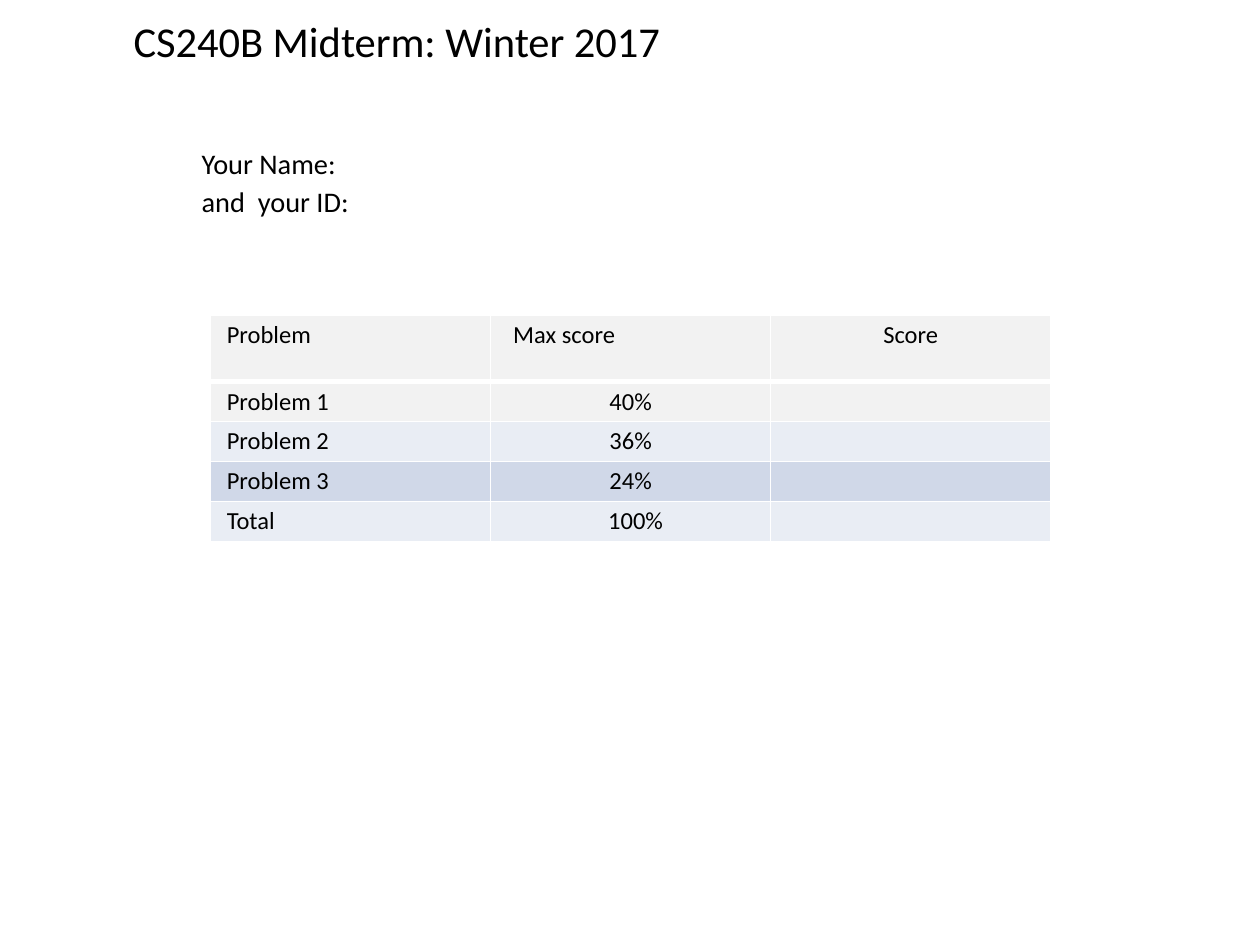
from pptx import Presentation
from pptx import util as u
from pptx.dml.color import RGBColor
from pptx.enum import text
from pptx.oxml import parse_xml
from pptx.oxml.ns import nsdecls

COLORS = {
    "ink": "000000",
    "border": "FFFFFF",
    "gray": "F2F2F2",
    "light": "E9EDF4",
    "blue": "D0D8E8",
}
LEFT, CENTER = text.PP_ALIGN.LEFT, text.PP_ALIGN.CENTER


class ExamSlide:
    font_name = "Calibri"

    def __init__(self, slide):
        self.slide = slide

    def style(self, paragraph, size, align=LEFT):
        paragraph.alignment = align
        paragraph.font.name = self.font_name
        paragraph.font.size = u.Pt(size)
        paragraph.font.color.rgb = RGBColor.from_string(COLORS["ink"])

    def title(self, lines, left, top, width, height):
        """Fill the title with (wording, size, indent, space before) lines."""
        heading = self.slide.shapes.title
        heading.left, heading.top = u.Inches(left), u.Inches(top)
        heading.width, heading.height = u.Inches(width), u.Inches(height)
        frame = heading.text_frame
        frame.auto_size = text.MSO_AUTO_SIZE.NONE
        frame.vertical_anchor = text.MSO_ANCHOR.MIDDLE
        frame.text = "\n".join(line[0] for line in lines)
        for paragraph, (_, size, indent, before) in zip(frame.paragraphs, lines):
            self.style(paragraph, size)
            paragraph.space_before = u.Pt(before)
            properties = paragraph._p.get_or_add_pPr()
            properties.set("marL", str(u.Inches(indent)))
            properties.set("indent", "0")

    def cell_border(self, cell, bottom):
        properties = cell._tc.get_or_add_tcPr()
        widths = {"lnL": 1, "lnR": 1, "lnT": 1, "lnB": bottom}
        for position, (side, points) in enumerate(widths.items()):
            properties.insert(position, parse_xml(
                f'<a:{side} {nsdecls("a")} w="{u.Pt(points)}"><a:solidFill>'
                f'<a:srgbClr val="{COLORS["border"]}"/></a:solidFill></a:{side}>'))

    def table(self, rows, fills, heights, left, top, width):
        """Draw the score table; each cell is (wording, alignment, extra left inset)."""
        grid = self.slide.shapes.add_table(
            len(rows), len(rows[0]), u.Inches(left), u.Inches(top),
            u.Inches(width), u.Inches(sum(heights))).table
        for r, (row, fill, height) in enumerate(zip(rows, fills, heights)):
            grid.rows[r].height = u.Inches(height)
            for c, (wording, align, inset) in enumerate(row):
                cell = grid.cell(r, c)
                cell.text = wording
                cell.margin_left = u.Inches(0.13 + inset)
                cell.margin_right = u.Inches(0.13)
                cell.margin_top = cell.margin_bottom = u.Inches(0.04)
                cell.fill.solid()
                cell.fill.fore_color.rgb = RGBColor.from_string(COLORS[fill])
                self.style(cell.text_frame.paragraphs[0], 14, align)
                self.cell_border(cell, bottom=3 if r == 0 else 1)


def main():
    deck = Presentation()
    deck.slide_width, deck.slide_height = u.Inches(10), u.Inches(7.5)
    exam = ExamSlide(deck.slides.add_slide(deck.slide_layouts[5]))

    exam.title([
        ("CS240B Midterm: Winter 2017", 24.3, 0.46, 0),
        ("Your Name:", 16.2, 1, 46),
        ("and  your ID:", 16.2, 1, 2),
    ], 0.5, 0.3, 9, 1.25)

    header = [("Problem", LEFT, 0), ("Max score", LEFT, 0.05), ("Score", CENTER, 0)]
    scores = [("Problem 1", "40%", 0), ("Problem 2", "36%", 0),
              ("Problem 3", "24%", 0), ("Total", "100%", 0.08)]
    rows = [header] + [
        [(problem, LEFT, 0), (maximum, CENTER, inset), ("", CENTER, 0)]
        for problem, maximum, inset in scores]
    exam.table(rows, ["gray", "gray", "light", "blue", "light"],
               [0.53] + [0.31] * len(scores), 1.67, 2.5, 6.67)

    deck.save("out.pptx")


if __name__ == "__main__":
    main()
